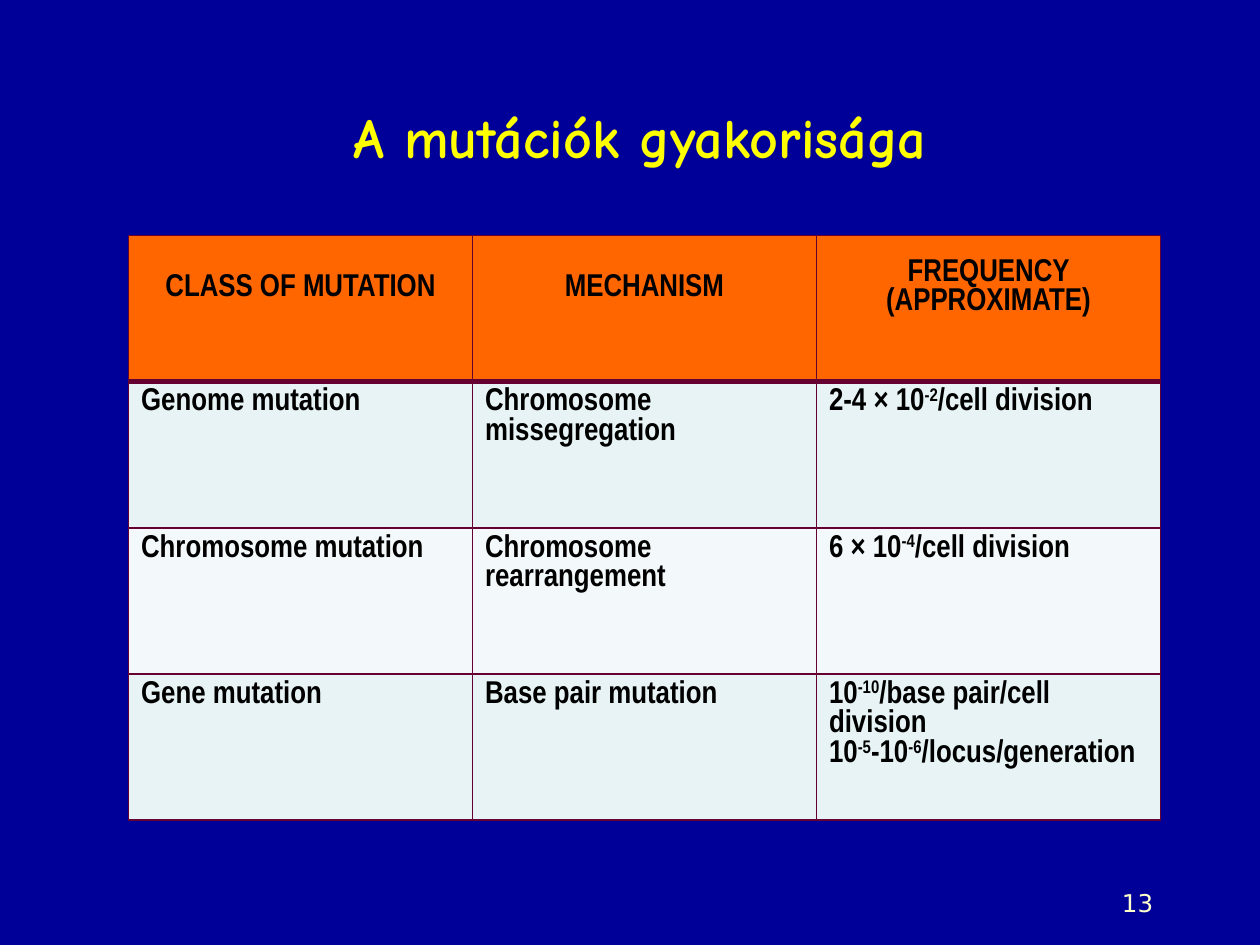
import pptx
import pptx.util
import pptx.dml.color
import pptx.enum.text
import pptx.oxml
import pptx.oxml.ns
from pptx.util import Inches

ALIGN = pptx.enum.text.PP_ALIGN
ANCHOR = pptx.enum.text.MSO_ANCHOR
BORDER = "660033"
HEADINGS = ["CLASS OF MUTATION", "MECHANISM", "FREQUENCY (APPROXIMATE)"]
MUTATIONS = [
    ["Genome mutation", "Chromosome missegregation", [["2-4 × 10", "-2", "/cell division"]]],
    ["Chromosome mutation", "Chromosome rearrangement", [["6 × 10", "-4", "/cell division"]]],
    ["Gene mutation", "Base pair mutation",
     [["10", "-10", "/base pair/cell division"],
      ["10", "-5", "-10", "-6", "/locus/generation"]]],
]
BANDS = ["E7F3F4", "F3F9FA"]


def color(code):
    return pptx.dml.color.RGBColor.from_string(code)


class SlideBuilder:
    def __init__(self, deck, background):
        self.slide = deck.slides.add_slide(deck.slide_layouts[5])
        fill = self.slide.background.fill
        fill.solid()
        fill.fore_color.rgb = color(background)

    def add_span(self, para, text, font, size, code, bold=False, raised=False):
        span = para.add_run()
        span.text = text
        span.font.name = font
        span.font.size = pptx.util.Pt(size)
        span.font.bold = bold
        span.font.color.rgb = color(code)
        if raised:
            span.font._element.set("baseline", "30000")

    def title(self, text, left, top, width, height):
        box = self.slide.shapes.title
        box.left, box.top, box.width, box.height = map(Inches, (left, top, width, height))
        frame = box.text_frame
        frame.vertical_anchor = ANCHOR.TOP
        frame.auto_size = pptx.enum.text.MSO_AUTO_SIZE.SHAPE_TO_FIT_TEXT
        para = frame.paragraphs[0]
        para.alignment = ALIGN.CENTER
        self.add_span(para, text, "Comic Neue", 32, "FFFF00", bold=True)

    def page_number(self, text, left, top, width, height):
        box = self.slide.shapes.add_textbox(*map(Inches, (left, top, width, height)))
        frame = box.text_frame
        frame.word_wrap = True
        frame.vertical_anchor = ANCHOR.BOTTOM
        para = frame.paragraphs[0]
        para.alignment = ALIGN.RIGHT
        self.add_span(para, text, "DejaVu Sans", 14, "FFFFCC")

    def cell_borders(self, cell, top, bottom):
        properties = cell._tc.get_or_add_tcPr()
        widths = {"lnL": 1, "lnR": 1, "lnT": top, "lnB": bottom}
        for position, (side, width) in enumerate(widths.items()):
            line = pptx.oxml.parse_xml(
                f'<a:{side} {pptx.oxml.ns.nsdecls("a")} w="{pptx.util.Pt(width)}">'
                f'<a:solidFill><a:srgbClr val="{BORDER}"/></a:solidFill></a:{side}>')
            properties.insert(position, line)

    def cell(self, cell, lines, fill, header, top, bottom):
        cell.fill.solid()
        cell.fill.fore_color.rgb = color(fill)
        cell.vertical_anchor = ANCHOR.MIDDLE if header else ANCHOR.TOP
        if header:
            cell.margin_bottom = Inches(0.38)
        frame = cell.text_frame
        for number, parts in enumerate(lines):
            para = frame.add_paragraph() if number else frame.paragraphs[0]
            para.alignment = ALIGN.CENTER if header else ALIGN.LEFT
            for index, text in enumerate(parts):
                self.add_span(para, text, "Arial Narrow", 18, "000000",
                              bold=True, raised=index % 2 == 1)
        self.cell_borders(cell, top, bottom)

    def table(self, rows, left, top, column_width, row_height):
        columns = len(rows[0])
        table = self.slide.shapes.add_table(
            len(rows), columns, Inches(left), Inches(top),
            Inches(column_width * columns), Inches(row_height * len(rows))).table
        for column in table.columns:
            column.width = Inches(column_width)
        for row_index, row in enumerate(rows):
            table.rows[row_index].height = Inches(row_height)
            header = row_index == 0
            fill = "FF6600" if header else BANDS[(row_index - 1) % 2]
            for column_index, content in enumerate(row):
                lines = [[content]] if isinstance(content, str) else content
                self.cell(table.cell(row_index, column_index), lines, fill, header,
                          top=3 if row_index == 1 else 1, bottom=3 if header else 1)


def main():
    deck = pptx.Presentation()
    deck.slide_width, deck.slide_height = Inches(10), Inches(7.5)
    page = SlideBuilder(deck, "000099")
    page.page_number("13", 7.17, 6.83, 2.08, 0.5)
    page.table([HEADINGS] + MUTATIONS, 1.02, 1.87, 2.73, 1.16)
    page.title("A mutációk gyakorisága", 0.16, 0.76, 9.84, 0.64)
    deck.save("out.pptx")


if __name__ == "__main__":
    main()
